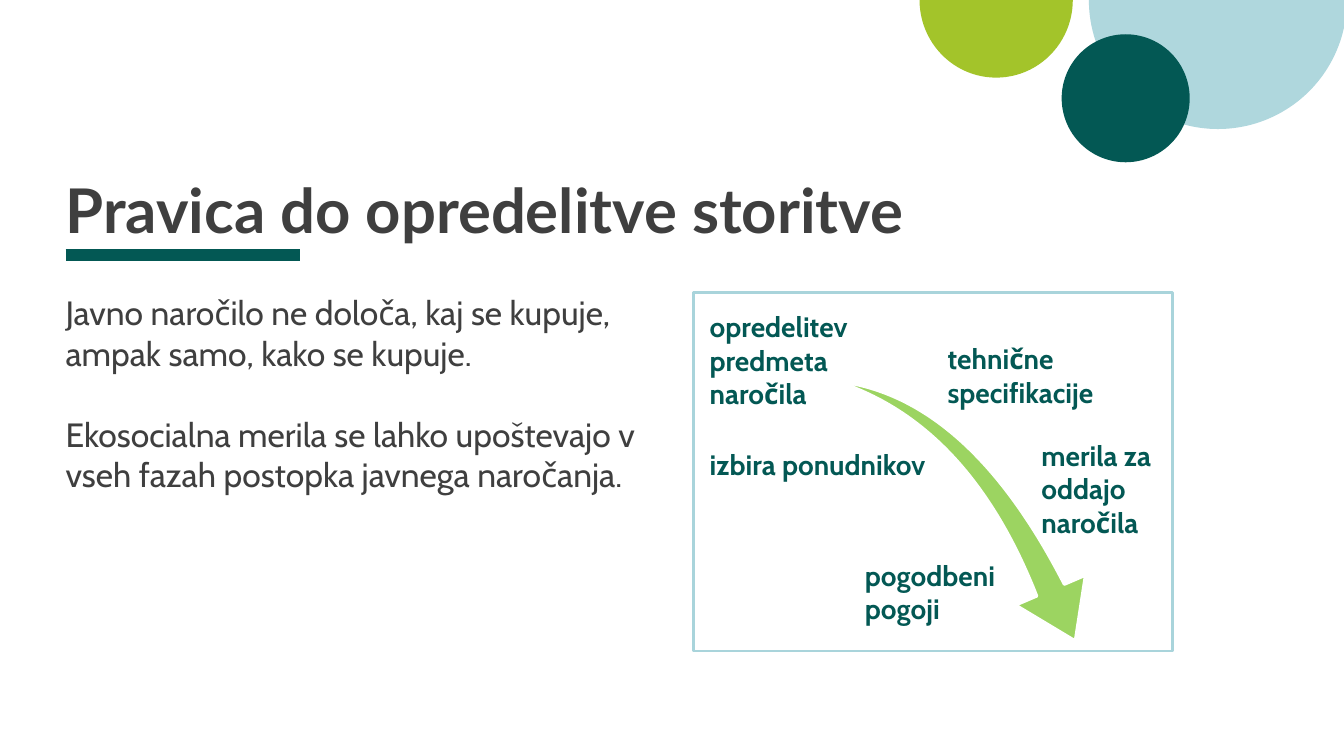
from lxml.etree import SubElement
from pptx import Presentation
from pptx.dml.color import RGBColor
from pptx.enum.shapes import MSO_CONNECTOR, MSO_SHAPE
from pptx.enum.text import MSO_ANCHOR, MSO_AUTO_SIZE, PP_ALIGN
from pptx.oxml.ns import qn
from pptx.util import Inches, Pt

WHITE = RGBColor(0xFF, 0xFF, 0xFF)
GREY = RGBColor(0x3F, 0x3F, 0x3F)
TEAL = RGBColor(0x03, 0x58, 0x54)
LIME = RGBColor(0xA3, 0xC4, 0x2A)
PALE_BLUE = RGBColor(0xAF, 0xD7, 0xDD)
FRAME_BLUE = RGBColor(0xA9, 0xD4, 0xDB)
ARROW_GREEN = RGBColor(0x92, 0xD0, 0x50)

LEFT = 0.65


class SlideBuilder:
    """Holds the fonts and the current slide."""

    heading_font = "Lato"
    body_font = "Cabin"

    def __init__(self, prs):
        self.s = prs.slides.add_slide(prs.slide_layouts[1])

    def shape(self, kind, box, fill, line=None, adjustments=()):
        sp = self.s.shapes.add_shape(kind, *map(Inches, box))
        sp.shadow.inherit = False
        sp.fill.solid()
        sp.fill.fore_color.rgb = fill
        if line is None:
            sp.line.fill.background()
        else:
            sp.line.color.rgb = line
            sp.line.width = Pt(2)
        for i, value in enumerate(adjustments):
            sp.adjustments[i] = value
        return sp

    def line(self, x1, y1, x2, y2, color, width):
        ends = map(Inches, (x1, y1, x2, y2))
        cxn = self.s.shapes.add_connector(MSO_CONNECTOR.STRAIGHT, *ends)
        cxn.line.color.rgb = color
        cxn.line.width = Pt(width)
        SubElement(cxn._element.spPr, qn("a:effectLst"))

    def style(self, p, font, size, color, bold=False):
        p.alignment = PP_ALIGN.LEFT
        for r in p.runs:
            r.font.name = font
            r.font.size = Pt(size)
            r.font.bold = bold
            r.font.color.rgb = color

    def place(self, sp, box):
        sp.left, sp.top, sp.width, sp.height = map(Inches, box)
        tf = sp.text_frame
        tf.margin_left = tf.margin_top = tf.margin_right = tf.margin_bottom = 0
        tf.word_wrap = True
        tf.auto_size = MSO_AUTO_SIZE.NONE
        return tf

    def title(self, text, box):
        tf = self.place(self.s.shapes.title, box)
        tf.vertical_anchor = MSO_ANCHOR.BOTTOM
        tf.text = text
        p = tf.paragraphs[0]
        p.line_spacing = 0.8
        self.style(p, self.heading_font, 44, GREY, bold=True)

    def body(self, paragraphs, box):
        tf = self.place(self.s.placeholders[1], box)
        tf.vertical_anchor = MSO_ANCHOR.TOP
        tf.text = "\n".join(paragraphs)
        for i, p in enumerate(tf.paragraphs):
            pPr = p._p.get_or_add_pPr()
            pPr.set("marL", "0")
            pPr.set("indent", "0")
            SubElement(pPr, qn("a:buNone"))
            p.space_before = Pt(29 if i else 0)
            self.style(p, self.body_font, 24, GREY)

    def label(self, text, box):
        tf = self.s.shapes.add_textbox(*map(Inches, box)).text_frame
        tf.word_wrap = True
        tf.text = text
        self.style(tf.paragraphs[0], self.body_font, 20, TEAL, bold=True)

    def swoosh(self, box, rotation):
        sp = self.shape(MSO_SHAPE.SWOOSH_ARROW, box, ARROW_GREEN, WHITE, (0.163, 0.314))
        sp.rotation = rotation
        color = sp._element.spPr.find(qn("a:solidFill"))[0]
        SubElement(color, qn("a:alpha"), val="90000")


def main():
    prs = Presentation()
    prs.slide_width, prs.slide_height = Inches(13.33), Inches(7.5)
    slide = SlideBuilder(prs)

    # Corner circles: two lower halves and one whole
    slide.shape(MSO_SHAPE.PIE, (10.8, -1.28, 2.56, 2.56), PALE_BLUE, adjustments=(0, 107.96))
    slide.shape(MSO_SHAPE.PIE, (9.12, -0.77, 1.52, 1.54), LIME, adjustments=(0, 108.52))
    slide.shape(MSO_SHAPE.OVAL, (10.53, 0.34, 1.27, 1.27), TEAL)

    # Title with its underline, and body text
    slide.line(LEFT, 2.53, 2.98, 2.53, TEAL, 8)
    slide.title("Pravica do opredelitve storitve", (LEFT, 1.84, 12.09, 0.59))
    slide.body(
        [
            "Javno naročilo ne določa, kaj se kupuje, ampak samo, kako se kupuje.",
            "Ekosocialna merila se lahko upoštevajo v vseh fazah postopka javnega naročanja.",
        ],
        (LEFT, 2.9, 6.1, 2.02),
    )

    # Framed diagram of the procurement phases
    slide.shape(MSO_SHAPE.RECTANGLE, (6.88, 2.9, 4.75, 3.56), WHITE, FRAME_BLUE)
    slide.swoosh((8.05, 4.13, 3.14, 1.8), 73.3)
    for text, box in (
        ("opredelitev predmeta naročila", (6.94, 3.02, 2.13, 1.11)),
        ("tehnične specifikacije", (9.3, 3.34, 2.13, 0.75)),
        ("izbira ponudnikov", (6.94, 4.39, 2.54, 0.42)),
        ("pogodbeni pogoji", (8.48, 5.49, 1.66, 0.75)),
        ("merila za oddajo naročila", (10.23, 4.3, 1.44, 1.07)),
    ):
        slide.label(text, box)

    prs.save("out.pptx")


if __name__ == "__main__":
    main()
